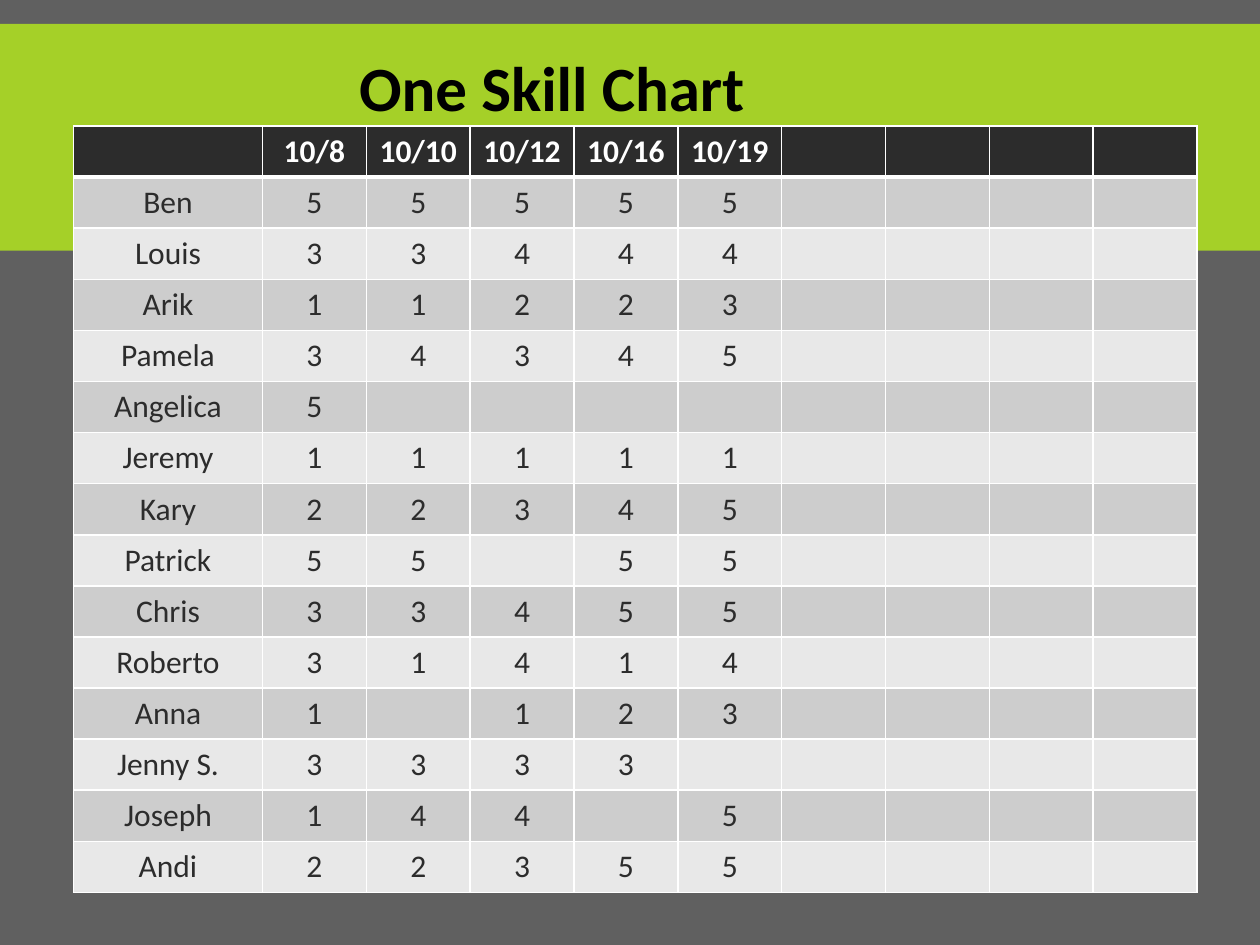
from dataclasses import dataclass

import pptx
import pptx.dml.color
import pptx.enum.shapes
import pptx.enum.text
import pptx.oxml
import pptx.oxml.ns
import pptx.util
from pptx.util import Pt


@dataclass(frozen=True)
class Theme:
    """Colours, font and type sizes of the slide."""
    background: str = "606060"
    band: str = "A5D028"
    dark: str = "2C2C2C"
    odd_row: str = "CDCDCD"
    even_row: str = "E8E8E8"
    white: str = "FFFFFF"
    title_color: str = "000000"
    font: str = "Calibri"
    title_size: float = 36
    table_size: float = 18
    border: float = 1
    header_border: float = 3


THEME = Theme()
COLUMN_COUNT = 10
NAME_WIDTH = 108
ROWS = [
    ["", "10/8", "10/10", "10/12", "10/16", "10/19"],
    ["Ben", "5", "5", "5", "5", "5"],
    ["Louis", "3", "3", "4", "4", "4"],
    ["Arik", "1", "1", "2", "2", "3"],
    ["Pamela", "3", "4", "3", "4", "5"],
    ["Angelica", "5"],
    ["Jeremy", "1", "1", "1", "1", "1"],
    ["Kary", "2", "2", "3", "4", "5"],
    ["Patrick", "5", "5", "", "5", "5"],
    ["Chris", "3", "3", "4", "5", "5"],
    ["Roberto", "3", "1", "4", "1", "4"],
    ["Anna", "1", "", "1", "2", "3"],
    ["Jenny S.", "3", "3", "3", "3"],
    ["Joseph", "1", "4", "4", "", "5"],
    ["Andi", "2", "2", "3", "5", "5"],
]


def set_fill(fill, color):
    """Give a fill one solid colour."""
    fill.solid()
    fill.fore_color.rgb = pptx.dml.color.RGBColor.from_string(color)


def format_runs(paragraph, size, color, bold):
    """Apply font, size, colour and weight to every run."""
    for run in paragraph.runs:
        run.font.name = THEME.font
        run.font.size = Pt(size)
        run.font.bold = bold
        run.font.color.rgb = pptx.dml.color.RGBColor.from_string(color)


def set_borders(cell, top, bottom):
    """Draw white borders around a cell."""
    properties = cell._tc.get_or_add_tcPr()
    widths = {"lnL": THEME.border, "lnR": THEME.border, "lnT": top, "lnB": bottom}
    for position, (tag, width) in enumerate(widths.items()):
        line = pptx.oxml.parse_xml(
            f'<a:{tag} {pptx.oxml.ns.nsdecls("a")} w="{Pt(width)}"><a:solidFill>'
            f'<a:srgbClr val="{THEME.white}"/></a:solidFill></a:{tag}>')
        properties.insert(position, line)


def add_band(slide, left, top, width, height):
    """Place the coloured band behind the title."""
    band = slide.shapes.add_shape(
        pptx.enum.shapes.MSO_SHAPE.RECTANGLE, Pt(left), Pt(top), Pt(width), Pt(height))
    band.shadow.inherit = False
    set_fill(band.fill, THEME.band)
    band.line.fill.background()


def add_skill_table(slide, left, top, width, height):
    """Place the table of scores by name and date."""
    table = slide.shapes.add_table(
        len(ROWS), COLUMN_COUNT, Pt(left), Pt(top), Pt(width), Pt(height)).table
    date_width = (width - NAME_WIDTH) / (COLUMN_COUNT - 1)
    for index, column in enumerate(table.columns):
        column.width = Pt(date_width if index else NAME_WIDTH)
    for row_index, values in enumerate(ROWS):
        table.rows[row_index].height = Pt(height / len(ROWS))
        header = row_index == 0
        stripe = THEME.odd_row if row_index % 2 else THEME.even_row
        for column_index in range(COLUMN_COUNT):
            cell = table.cell(row_index, column_index)
            set_fill(cell.fill, THEME.dark if header else stripe)
            set_borders(cell,
                        THEME.header_border if row_index == 1 else THEME.border,
                        THEME.header_border if header else THEME.border)
            cell.vertical_anchor = pptx.enum.text.MSO_ANCHOR.MIDDLE
            paragraph = cell.text_frame.paragraphs[0]
            paragraph.alignment = pptx.enum.text.PP_ALIGN.CENTER
            if column_index < len(values) and values[column_index]:
                paragraph.text = values[column_index]
                format_runs(paragraph, THEME.table_size,
                            THEME.white if header else THEME.dark, header)


def place_title(slide, left, top, width, height):
    """Move the title placeholder to its box, in front of the band."""
    title = slide.shapes.title
    title.left, title.top, title.width, title.height = map(Pt, (left, top, width, height))
    frame = title.text_frame
    frame.text = "One Skill Chart"
    frame.word_wrap = True
    frame.auto_size = pptx.enum.text.MSO_AUTO_SIZE.SHAPE_TO_FIT_TEXT
    frame.vertical_anchor = pptx.enum.text.MSO_ANCHOR.TOP
    paragraph = frame.paragraphs[0]
    paragraph.alignment = pptx.enum.text.PP_ALIGN.LEFT
    format_runs(paragraph, THEME.title_size, THEME.title_color, True)
    slide.shapes._spTree.append(title._element)


def main():
    """Build the slide and save it."""
    presentation = pptx.Presentation()
    presentation.slide_width, presentation.slide_height = Pt(720), Pt(540)
    slide = presentation.slides.add_slide(presentation.slide_layouts.get_by_name("Title Only"))
    set_fill(slide.background.fill, THEME.background)
    add_band(slide, 0, 13.68, 720, 129.6)
    add_skill_table(slide, 42, 72, 642, 438)
    place_title(slide, 198, 24, 354, 51)
    presentation.save("out.pptx")


if __name__ == "__main__":
    main()
